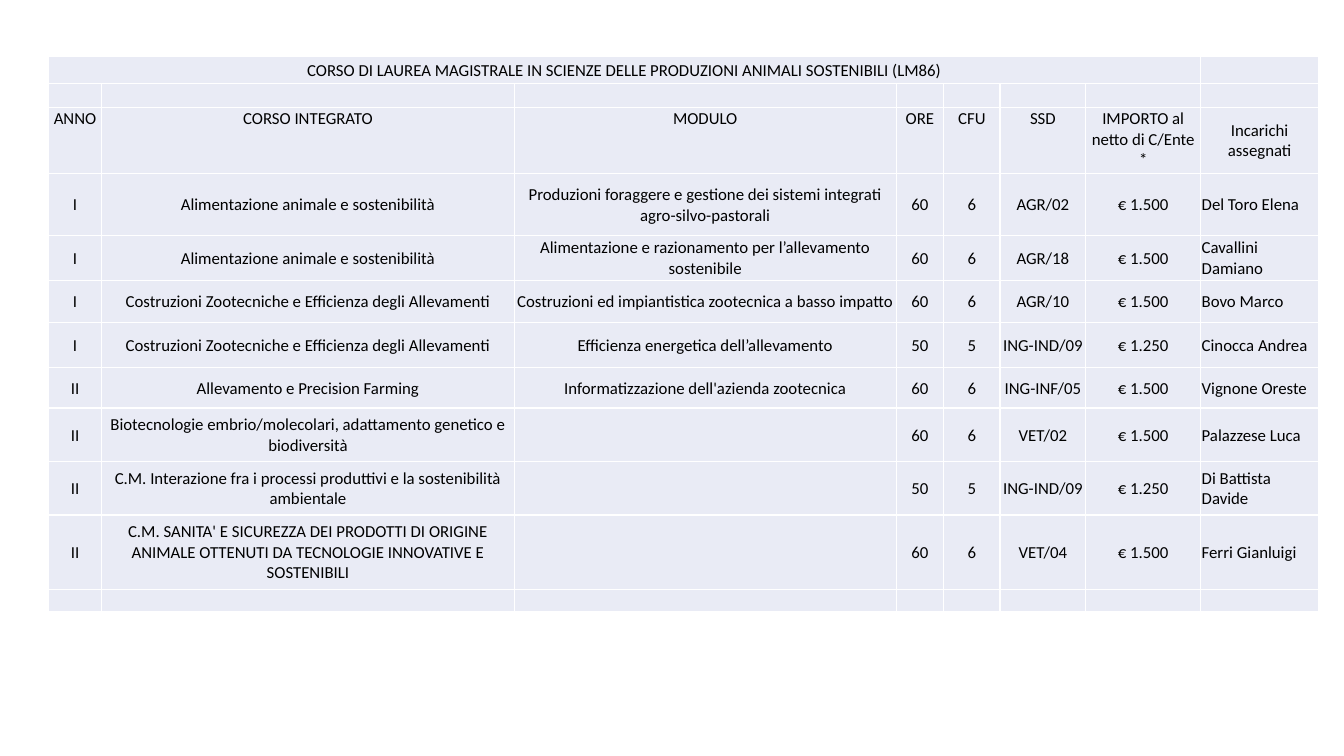
from lxml import etree
from pptx import Presentation
from pptx import util as u
from pptx.dml.color import RGBColor
from pptx.enum import text
from pptx.oxml import ns

COLORS = {"cell": "E9EBF5", "border": "FFFFFF", "text": "000000"}
FONT_SIZE = u.Pt(12)
COLUMN_WIDTHS = [0.53, 4.09, 3.79, 0.47, 0.56, 0.85, 1.14, 1.17]
ROW_HEIGHTS = [0.27, 0.24, 0.65, 0.62, 0.44, 0.42, 0.45, 0.4, 0.53, 0.53, 0.74, 0.22]
HEADER_ROW = 2
NAME_COLUMN = len(COLUMN_WIDTHS) - 1

TITLE = "CORSO DI LAUREA MAGISTRALE IN SCIENZE DELLE PRODUZIONI ANIMALI SOSTENIBILI (LM86)"
HEADERS = ["ANNO", "CORSO INTEGRATO", "MODULO", "ORE", "CFU", "SSD",
           "IMPORTO al netto di C/Ente *", "Incarichi assegnati"]
FEEDING = "Alimentazione animale e sostenibilità"
BUILDINGS = "Costruzioni Zootecniche e Efficienza degli Allevamenti"
COURSES = [
    ["I", FEEDING, "Produzioni foraggere e gestione dei sistemi integrati agro-silvo-pastorali",
     "60", "6", "AGR/02", "€ 1.500", "Del Toro Elena"],
    ["I", FEEDING, "Alimentazione e razionamento per l’allevamento sostenibile",
     "60", "6", "AGR/18", "€ 1.500", "Cavallini Damiano"],
    ["I", BUILDINGS, "Costruzioni ed impiantistica zootecnica a basso impatto",
     "60", "6", "AGR/10", "€ 1.500", "Bovo Marco"],
    ["I", BUILDINGS, "Efficienza energetica dell’allevamento",
     "50", "5", "ING-IND/09", "€ 1.250", "Cinocca Andrea"],
    ["II", "Allevamento e Precision Farming", "Informatizzazione dell'azienda zootecnica",
     "60", "6", "ING-INF/05", "€ 1.500", "Vignone Oreste"],
    ["II", "Biotecnologie embrio/molecolari, adattamento genetico e biodiversità", "",
     "60", "6", "VET/02", "€ 1.500", "Palazzese Luca"],
    ["II", "C.M. Interazione fra i processi produttivi e la sostenibilità ambientale", "",
     "50", "5", "ING-IND/09", "€ 1.250", "Di Battista Davide"],
    ["II", "C.M. SANITA' E SICUREZZA DEI PRODOTTI DI ORIGINE ANIMALE OTTENUTI DA "
     "TECNOLOGIE INNOVATIVE E SOSTENIBILI", "",
     "60", "6", "VET/04", "€ 1.500", "Ferri Gianluigi"],
]
EMPTY_ROW = [""] * len(COLUMN_WIDTHS)
ROWS = [[TITLE] + EMPTY_ROW[1:], EMPTY_ROW, HEADERS, *COURSES, EMPTY_ROW]


def add_borders(cell):
    properties = cell._tc.get_or_add_tcPr()
    for side in ("a:lnL", "a:lnR", "a:lnT", "a:lnB"):
        line = etree.SubElement(properties, ns.qn(side), w=str(u.Pt(1)))
        fill = etree.SubElement(line, ns.qn("a:solidFill"))
        etree.SubElement(fill, ns.qn("a:srgbClr"), val=COLORS["border"])


def write_text(paragraph, content):
    """Add one run, or keep an empty line at the table's text size."""
    if not content:
        etree.SubElement(paragraph._p, ns.qn("a:endParaRPr"), sz=str(int(FONT_SIZE.pt * 100)))
        return
    run = paragraph.add_run()
    run.text = content
    run.font.name = "Calibri"
    run.font.size = FONT_SIZE
    run.font.bold = False
    run.font.color.rgb = RGBColor.from_string(COLORS["text"])


presentation = Presentation()
presentation.slide_width = u.Inches(13.33)
presentation.slide_height = u.Inches(7.5)
slide = presentation.slides.add_slide(presentation.slide_layouts[6])

table = slide.shapes.add_table(
    len(ROWS), len(COLUMN_WIDTHS), u.Inches(0.48), u.Inches(0.56),
    u.Inches(sum(COLUMN_WIDTHS)), u.Inches(sum(ROW_HEIGHTS))).table
table.first_row = False
table.horz_banding = False
for column, width in zip(table.columns, COLUMN_WIDTHS):
    column.width = u.Inches(width)
for row, height in zip(table.rows, ROW_HEIGHTS):
    row.height = u.Inches(height)
table.cell(0, 0).merge(table.cell(0, NAME_COLUMN - 1))

for row_index, contents in enumerate(ROWS):
    for column_index, content in enumerate(contents):
        cell = table.cell(row_index, column_index)
        add_borders(cell)
        cell.fill.solid()
        cell.fill.fore_color.rgb = RGBColor.from_string(COLORS["cell"])
        cell.margin_left = cell.margin_right = cell.margin_top = u.Inches(0.01)
        cell.margin_bottom = 0

        is_top_header = row_index == HEADER_ROW and column_index < NAME_COLUMN
        cell.vertical_anchor = text.MSO_ANCHOR.TOP if is_top_header else text.MSO_ANCHOR.MIDDLE
        is_name = row_index > HEADER_ROW and column_index == NAME_COLUMN
        paragraph = cell.text_frame.paragraphs[0]
        paragraph.alignment = text.PP_ALIGN.LEFT if is_name else text.PP_ALIGN.CENTER
        write_text(paragraph, content)

presentation.save("out.pptx")
